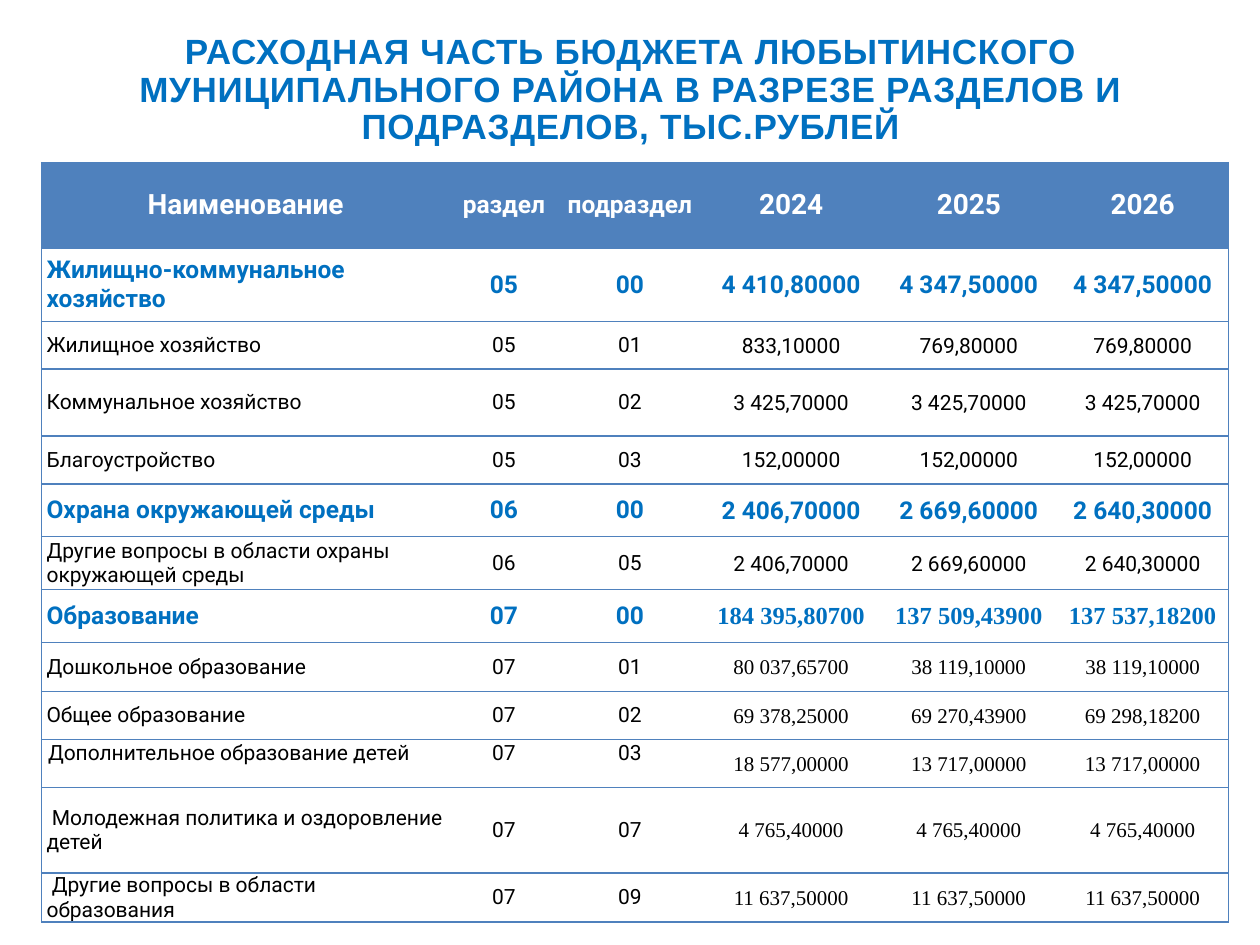
from lxml.etree import SubElement
from pptx import Presentation
from pptx.dml.color import RGBColor
from pptx.enum.text import MSO_ANCHOR as Anchor, MSO_AUTO_SIZE as AutoSize, PP_ALIGN as Align
from pptx.oxml.ns import qn
from pptx.util import Inches, Pt

BLUE = RGBColor(0x00, 0x70, 0xC0)
HEADER_BLUE = RGBColor(0x4F, 0x81, 0xBD)
WHITE = RGBColor(0xFF, 0xFF, 0xFF)
BLACK = RGBColor(0x00, 0x00, 0x00)

NO_GRID_STYLE = "{2D5ABB26-0587-4C30-8999-92F81FD0307C}"
TITLE = ("РАСХОДНАЯ ЧАСТЬ БЮДЖЕТА ЛЮБЫТИНСКОГО МУНИЦИПАЛЬНОГО РАЙОНА "
         "В РАЗРЕЗЕ РАЗДЕЛОВ И ПОДРАЗДЕЛОВ, ТЫС.РУБЛЕЙ")
COLUMN_WIDTHS = [3.24, 0.86, 1.14, 1.42, 1.4, 1.36]
ROW_HEIGHTS = [0.68, 0.58, 0.38, 0.53, 0.38, 0.42, 0.42, 0.42, 0.39, 0.38, 0.38, 0.68, 0.38]
TOP_ALIGNED_ROW = 10
EDUCATION = "07"
HEADER = ["Наименование", "раздел", "подраздел", "2024", "2025", "2026"]
BUDGET = [
    ["Жилищно-коммунальное хозяйство", "05", "00", "4 410,80000", "4 347,50000", "4 347,50000"],
    ["Жилищное хозяйство", "05", "01", "833,10000", "769,80000", "769,80000"],
    ["Коммунальное хозяйство", "05", "02", "3 425,70000", "3 425,70000", "3 425,70000"],
    ["Благоустройство", "05", "03", "152,00000", "152,00000", "152,00000"],
    ["Охрана окружающей среды", "06", "00", "2 406,70000", "2 669,60000", "2 640,30000"],
    ["Другие вопросы в области охраны окружающей среды", "06", "05",
     "2 406,70000", "2 669,60000", "2 640,30000"],
    ["Образование", "07", "00", "184 395,80700", "137 509,43900", "137 537,18200"],
    ["Дошкольное образование", "07", "01", "80 037,65700", "38 119,10000", "38 119,10000"],
    ["Общее образование", "07", "02", "69 378,25000", "69 270,43900", "69 298,18200"],
    [" Дополнительное образование детей", "07", "03",
     "18 577,00000", "13 717,00000", "13 717,00000"],
    [" Молодежная политика и оздоровление детей", "07", "07",
     "4 765,40000", "4 765,40000", "4 765,40000"],
    [" Другие вопросы в области образования", "07", "09",
     "11 637,50000", "11 637,50000", "11 637,50000"],
]


def set_attributes(target, values):
    for name, value in values.items():
        setattr(target, name, value)


def write_text(frame, text, align, size, color, bold, font_name):
    paragraph = frame.paragraphs[0]
    paragraph.alignment = align
    run = paragraph.add_run()
    run.text = text
    set_attributes(run.font, {"size": Pt(size), "bold": bold, "name": font_name})
    run.font.color.rgb = color
    return paragraph, run


def add_title(slide):
    title = slide.shapes.title
    set_attributes(title, {"left": Inches(0.25), "top": Inches(0.22),
                           "width": Inches(9.51), "height": Inches(0.29)})
    set_attributes(title.text_frame, {"word_wrap": True, "auto_size": AutoSize.NONE,
                                      "vertical_anchor": Anchor.TOP})
    paragraph, run = write_text(title.text_frame, TITLE, Align.CENTER, 20, BLUE, True, "Arial")
    paragraph.line_spacing = 0.9
    run.font._element.set("spc", "40")


def add_borders(cell, sides):
    properties = cell._tc.get_or_add_tcPr()
    for side in sides:
        line = SubElement(properties, qn(f"a:ln{side}"), w=str(Pt(1)))
        fill = SubElement(line, qn("a:solidFill"))
        SubElement(fill, qn("a:srgbClr"), val=str(HEADER_BLUE))


def cell_text_format(row, column, values):
    if row == 0:
        return 14 if column in (1, 2) else 16, WHITE, True, "Roboto"
    font_name = "Times New Roman" if column > 2 and values[1] == EDUCATION else "Roboto"
    if values[2] == "00":
        return 14, BLUE, True, font_name
    return 12, BLACK, False, font_name


def format_cell(cell, row, column, values):
    top_aligned = row == TOP_ALIGNED_ROW
    narrow = row > 0 and (column > 2 or top_aligned)
    side_margin = Inches(0.01 if narrow else 0.04)
    set_attributes(cell, {
        "margin_left": side_margin, "margin_right": side_margin,
        "margin_top": Inches(0.01 if narrow else 0), "margin_bottom": 0,
        "vertical_anchor": Anchor.TOP if top_aligned and column < 3 else Anchor.MIDDLE,
    })
    add_borders(cell, {0: "LTB", len(HEADER) - 1: "RTB"}.get(column, "TB"))
    cell.fill.solid()
    cell.fill.fore_color.rgb = HEADER_BLUE if row == 0 else WHITE
    align = Align.LEFT if row > 0 and column == 0 else Align.CENTER
    write_text(cell.text_frame, values[column], align, *cell_text_format(row, column, values))


def add_budget_table(slide):
    rows = [HEADER] + BUDGET
    frame = slide.shapes.add_table(len(rows), len(HEADER), Inches(0.33), Inches(1.29),
                                   Inches(sum(COLUMN_WIDTHS)), Inches(sum(ROW_HEIGHTS)))
    table = frame.table
    table.horz_banding = False
    table._tbl.tblPr.find(qn("a:tableStyleId")).text = NO_GRID_STYLE
    for column, width in zip(table.columns, COLUMN_WIDTHS):
        column.width = Inches(width)
    for row, height in zip(table.rows, ROW_HEIGHTS):
        row.height = Inches(height)
    for row, values in enumerate(rows):
        for column in range(len(HEADER)):
            format_cell(table.cell(row, column), row, column, values)


def main():
    presentation = Presentation()
    set_attributes(presentation, {"slide_width": Inches(10), "slide_height": Inches(7.5)})
    slide = presentation.slides.add_slide(presentation.slide_layouts[5])
    add_title(slide)
    add_budget_table(slide)
    presentation.save("out.pptx")


if __name__ == "__main__":
    main()
